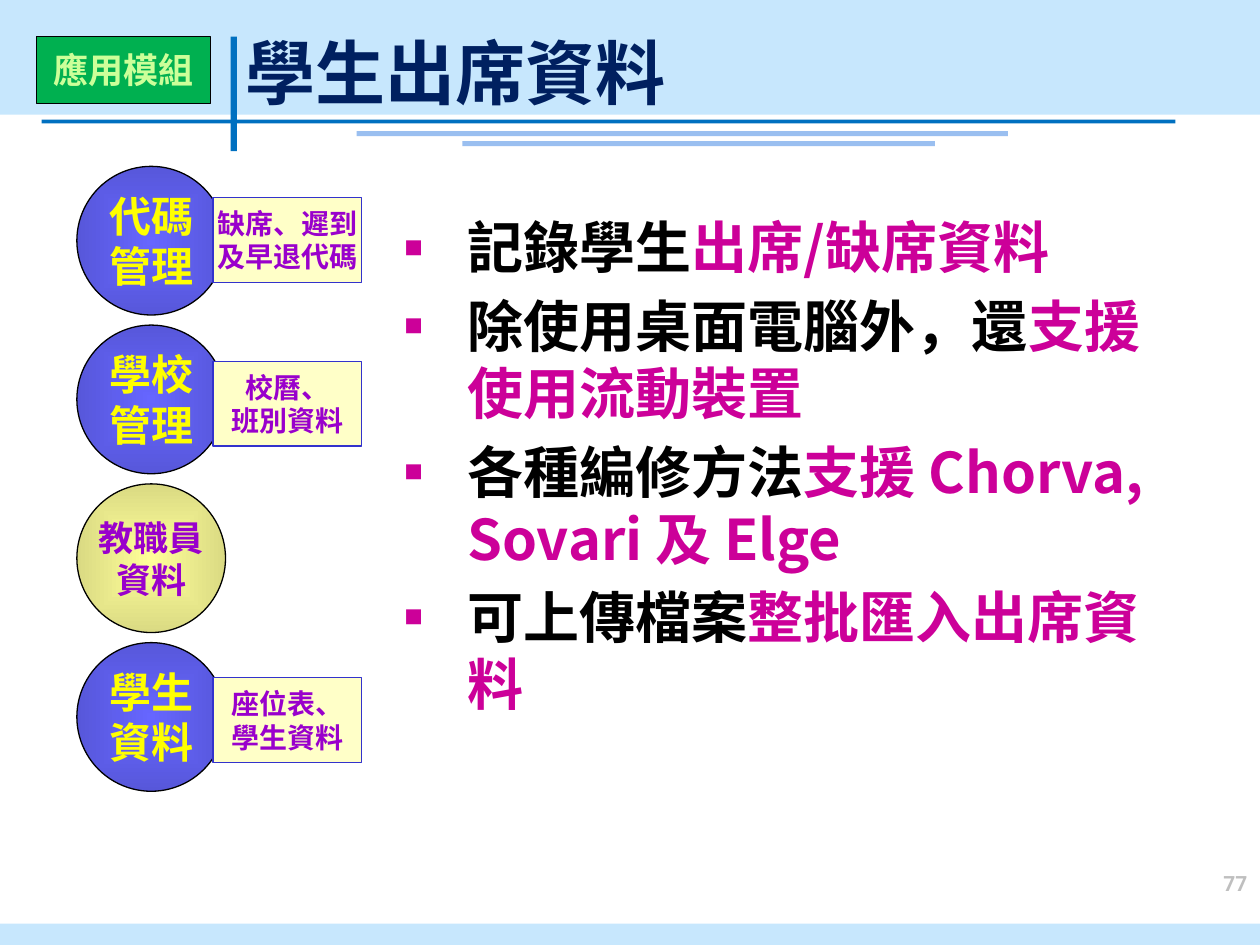
from dataclasses import dataclass

import lxml.etree
import pptx
import pptx.dml.color
import pptx.enum.shapes
import pptx.enum.text
import pptx.oxml.ns
import pptx.util

Inches = pptx.util.Inches
Shape = pptx.enum.shapes.MSO_SHAPE
Align = pptx.enum.text.PP_ALIGN
Anchor = pptx.enum.text.MSO_ANCHOR
qn = pptx.oxml.ns.qn


@dataclass(frozen=True)
class Theme:
    font: str = "Noto Sans CJK SC"
    number_font: str = "Roboto"
    band: str = "C7E7FD"
    rule: str = "0070C0"
    soft_rule: str = "9ABFF0"
    title: str = "002060"
    text: str = "000000"
    accent: str = "CC0099"
    number: str = "BFBFBF"
    badge: str = "00B050"
    badge_text: str = "CCFF99"
    outline: str = "000000"
    label: str = "FFFFC8"
    label_line: str = "3333CC"
    purple: str = "9900CC"
    yellow: str = "FFFF00"
    blue_glow: tuple = ("6666FF", "5757DA")
    khaki_glow: tuple = ("FFFF99", "DADA83")
    title_size: int = 40
    body_size: int = 32
    circle_size: int = 24
    small_size: int = 20
    label_size: int = 16
    number_size: int = 12


def rgb(value):
    return pptx.dml.color.RGBColor.from_string(value)


def add_xml(parent, tag, **attributes):
    values = {name: str(value) for name, value in attributes.items()}
    return lxml.etree.SubElement(parent, qn(tag), values)


def place(shape, at):
    for name, value in zip(("left", "top", "width", "height"), at):
        setattr(shape, name, Inches(value))


class SlideBuilder:
    def __init__(self, slide, theme):
        self.slide = slide
        self.theme = theme

    def add_span(self, para, text, size, color, bold=True, font=None):
        span = para.add_run()
        span.text = text
        name = font or self.theme.font
        formats = {"size": pptx.util.Pt(size), "bold": bold, "name": name}
        for key, value in formats.items():
            setattr(span.font, key, value)
        span.font.color.rgb = rgb(color)
        add_xml(span._r.get_or_add_rPr(), "a:ea", typeface=name)

    def set_frame(self, shape, **formats):
        formats = {"auto_size": pptx.enum.text.MSO_AUTO_SIZE.NONE, "word_wrap": True, **formats}
        for key, value in formats.items():
            setattr(shape.text_frame, key, value)
        return shape.text_frame

    def shape(self, kind, at, fill, line=None):
        """Add a preset shape; a pair of fill colours gives a centred glow."""
        shape = self.slide.shapes.add_shape(kind, *map(Inches, at))
        shape.shadow.inherit = False
        if isinstance(fill, tuple):
            self.glow(shape, fill)
        else:
            shape.fill.solid()
            shape.fill.fore_color.rgb = rgb(fill)
        if line:
            shape.line.color.rgb = rgb(line)
            shape.line.width = pptx.util.Pt(0.75)
        else:
            shape.line.fill.background()
        return shape

    def glow(self, shape, colors):
        shape.fill.gradient()
        for stop, color in zip(shape.fill.gradient_stops, colors):
            stop.color.rgb = rgb(color)
        gradient = shape._element.spPr.find(qn("a:gradFill"))
        gradient.remove(gradient.find(qn("a:lin")))
        center = add_xml(gradient, "a:path", path="shape")
        add_xml(center, "a:fillToRect", l=50000, t=50000, r=50000, b=50000)

    def backdrop(self, at, fill):
        """Add a plain bar behind the placeholders, above earlier bars."""
        bar = self.shape(Shape.RECTANGLE, at, fill)
        self.slide.shapes.title._element.addprevious(bar._element)

    def caption(self, kind, at, lines, fill, line, size, color):
        shape = self.shape(kind, at, fill, line)
        frame = self.set_frame(shape, word_wrap=False, vertical_anchor=Anchor.MIDDLE)
        for index, text in enumerate(lines):
            para = frame.add_paragraph() if index else frame.paragraphs[0]
            para.alignment = Align.CENTER
            self.add_span(para, text, size, color)

    def title(self, at, text):
        title = self.slide.shapes.title
        place(title, at)
        para = self.set_frame(title, vertical_anchor=Anchor.BOTTOM).paragraphs[0]
        para.alignment = Align.LEFT
        self.add_span(para, text, self.theme.title_size, self.theme.title)

    def bullets(self, at, items):
        """Fill the body with (plain, highlighted) pairs of text."""
        theme = self.theme
        body = self.slide.placeholders[1]
        place(body, at)
        frame = self.set_frame(body, vertical_anchor=Anchor.TOP)
        for index, (plain, highlight) in enumerate(items):
            para = frame.add_paragraph() if index else frame.paragraphs[0]
            para.space_before = pptx.util.Pt(0.2 * theme.body_size if index else 0)
            properties = para._p.get_or_add_pPr()
            properties.set("marL", str(Inches(0.5)))
            properties.set("indent", str(Inches(-0.5)))
            color = add_xml(properties, "a:buClr")
            add_xml(color, "a:srgbClr", val=theme.accent)
            add_xml(properties, "a:buSzPct", val=55000)
            add_xml(properties, "a:buFont", typeface="Arial")
            add_xml(properties, "a:buChar", char="■")
            self.add_span(para, plain, theme.body_size, theme.text)
            self.add_span(para, highlight, theme.body_size, theme.accent)

    def page_number(self, at, text):
        box = self.slide.shapes.add_textbox(*map(Inches, at))
        para = self.set_frame(box, vertical_anchor=Anchor.TOP).paragraphs[0]
        para.alignment = Align.RIGHT
        self.add_span(para, text, self.theme.number_size, self.theme.number,
                      font=self.theme.number_font)


def main():
    deck = pptx.Presentation()
    deck.slide_width, deck.slide_height = Inches(10), Inches(7.5)
    theme = Theme()
    page = SlideBuilder(deck.slides.add_slide(deck.slide_layouts[1]), theme)

    for at, fill in (
        ((0, 0, 10, 0.91), theme.band),
        ((0, 7.33, 10, 0.17), theme.band),
        ((1.83, 0.29, 0.05, 0.91), theme.rule),
        ((0.33, 0.95, 9, 0.03), theme.rule),
        ((2.83, 1.04, 5.17, 0.04), theme.soft_rule),
        ((3.67, 1.12, 3.75, 0.04), theme.soft_rule),
    ):
        page.backdrop(at, fill)

    page.title((1.85, 0.18, 3.69, 0.77), "學生出席資料")
    page.bullets((3.11, 1.64, 6.45, 4.84), (
        ("記錄學生", "出席/缺席資料"),
        ("除使用桌面電腦外，還", "支援使用流動裝置"),
        ("各種編修方法", "支援 Chorva, Sovari 及 Elge"),
        ("可上傳檔案", "整批匯入出席資料"),
    ))
    page.page_number((8.39, 6.86, 1.61, 0.5), "77")
    page.caption(Shape.RECTANGLE, (0.29, 0.29, 1.38, 0.53), ("應用模組",),
                 theme.badge, theme.outline, theme.small_size, theme.badge_text)

    blue = (theme.blue_glow, theme.circle_size, theme.yellow)
    khaki = (theme.khaki_glow, theme.small_size, theme.purple)
    modules = (
        (("代碼", "管理"), blue),
        (("學校", "管理"), blue),
        (("教職員", "資料"), khaki),
        (("學生", "資料"), blue),
    )
    for index, (lines, (fill, size, color)) in enumerate(modules):
        page.caption(Shape.OVAL, (0.61, 1.32 + 1.26 * index, 1.18, 1.18),
                     lines, fill, theme.outline, size, color)

    for top, lines in (
        (1.57, ("缺席、遲到", "及早退代碼")),
        (2.87, ("校曆、", "班別資料")),
        (5.38, ("座位表、", "學生資料")),
    ):
        page.caption(Shape.RECTANGLE, (1.69, top, 1.18, 0.67), lines,
                     theme.label, theme.label_line, theme.label_size, theme.purple)

    deck.save("out.pptx")


if __name__ == "__main__":
    main()
